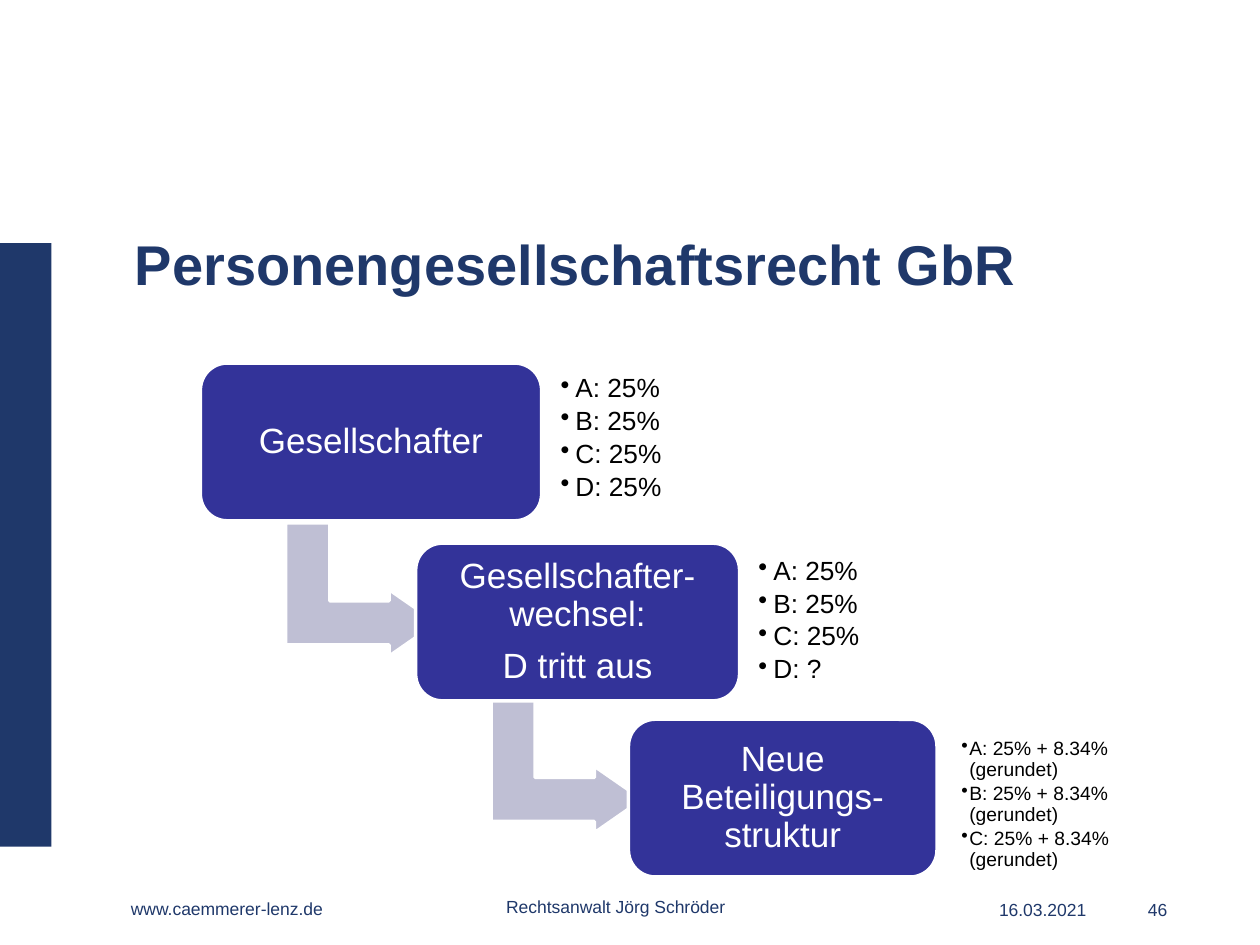
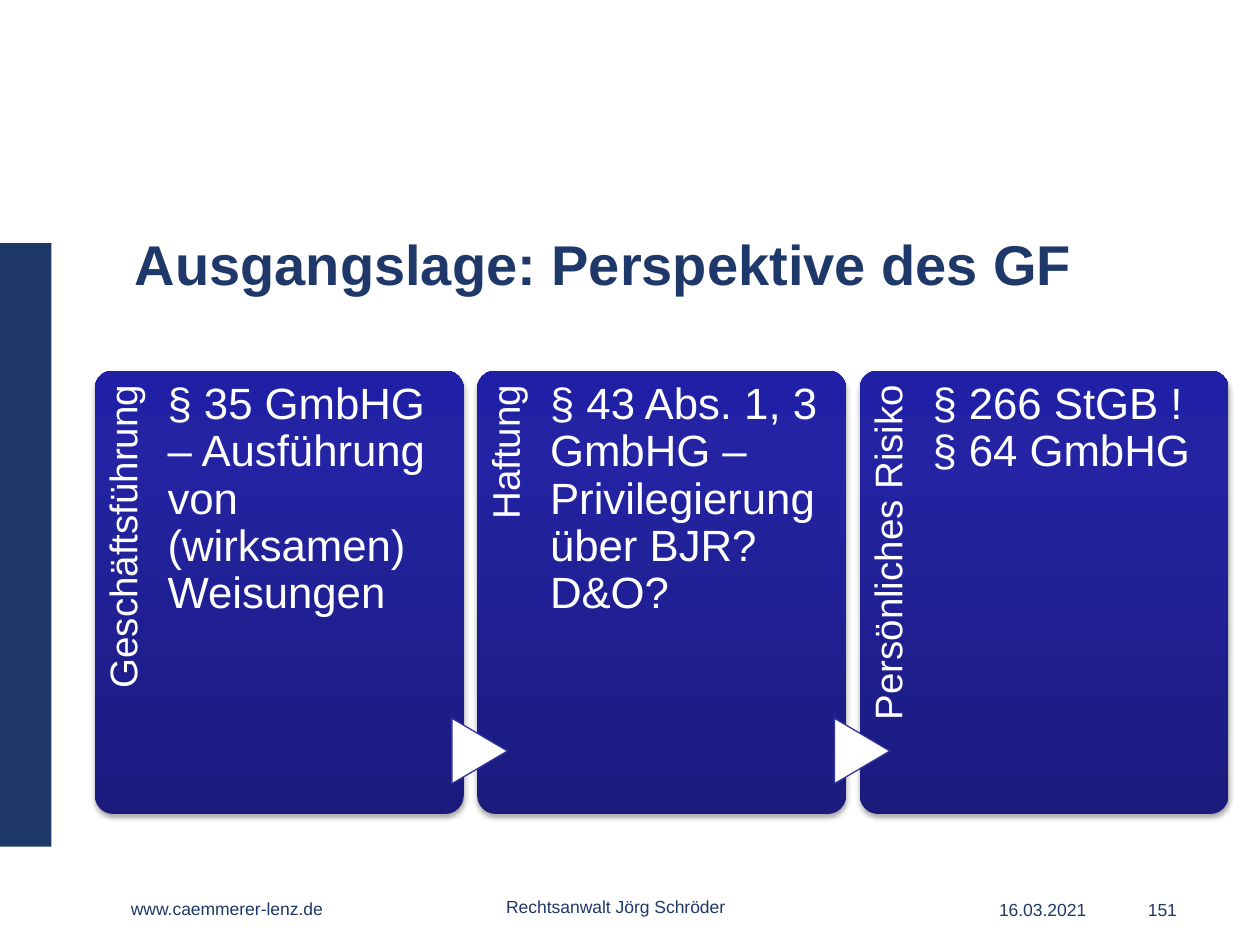
from dataclasses import dataclass

from lxml.etree import SubElement
from pptx import Presentation
from pptx.dml.color import RGBColor
from pptx.enum.shapes import MSO_SHAPE as Preset
from pptx.enum.text import MSO_ANCHOR as Anchor, PP_ALIGN as Align
from pptx.oxml.ns import qn
from pptx.util import Cm, Pt

NAVY = "1F386A"
INDIGO = "333399"
LILAC = "BFBFD4"
WHITE = "FFFFFF"
BLACK = "000000"
CARD_GRADIENT = ((0, "1B1B7E"), (80, "2323A3"), (100, "2020A6"))


@dataclass(frozen=True)
class Frame:
    left: float
    top: float
    width: float
    height: float

    def lengths(self):
        return Cm(self.left), Cm(self.top), Cm(self.width), Cm(self.height)


@dataclass(frozen=True)
class TextStyle:
    size: float
    color: str
    bold: bool = False
    align: Align = Align.LEFT
    anchor: Anchor = Anchor.TOP
    insets: tuple = (0, 0, 0, 0)
    line_spacing: float = 0.9
    space_after: float = 0
    hanging: float = 0


@dataclass(frozen=True)
class Step:
    box: Frame
    label: tuple
    shares_frame: Frame
    shares: tuple
    shares_style: TextStyle


@dataclass(frozen=True)
class Card:
    spine: str
    body: str


TITLE = TextStyle(32, NAVY, bold=True, insets=(0.23, 0.1, 0.23, 0.1), line_spacing=1)
FOOTER = TextStyle(10, NAVY, line_spacing=1.2)
FOOTER_CENTER = TextStyle(10, NAVY, align=Align.CENTER, line_spacing=1.2)
STEP_LABEL = TextStyle(20, WHITE, align=Align.CENTER, anchor=Anchor.MIDDLE,
                       insets=(0.2,) * 4, space_after=8)
SHARES = TextStyle(15, BLACK, anchor=Anchor.MIDDLE, insets=(0.2,) * 4,
                   space_after=2.6, hanging=0.3)
NEW_SHARES = TextStyle(11, BLACK, anchor=Anchor.MIDDLE, insets=(0.13,) * 4,
                       space_after=1.9, hanging=0.16)
SPINE = TextStyle(22, WHITE, align=Align.RIGHT, insets=(0, 0.2, 0.28, 0))
BODY = TextStyle(25, WHITE, insets=(0, 0.23, 0, 0))

STEPS = (
    Step(Frame(4.04, 7.32, 6.88, 3.18), ("Gesellschafter",),
         Frame(11.1, 7.32, 3.3, 3.05),
         ("A: 25%", "B: 25%", "C: 25%", "D: 25%"), SHARES),
    Step(Frame(8.38, 10.95, 6.53, 3.18), ("Gesellschafter-wechsel:", "D tritt aus"),
         Frame(15.09, 10.92, 3.3, 3.2),
         ("A: 25%", "B: 25%", "C: 25%", "D: ?"), SHARES),
    Step(Frame(12.67, 14.5, 6.22, 3.18), ("Neue Beteiligungs-struktur",),
         Frame(19.25, 14.94, 3.3, 2.57),
         tuple(f"{partner}: 25% + 8.34% (gerundet)" for partner in "ABC"), NEW_SHARES),
)
ELBOWS = (Frame(5.94, 10.36, 2.69, 3.05), Frame(10.08, 13.92, 2.69, 3.05))

CARDS = (
    Card("Geschäftsführung", "§ 35 GmbHG – Ausführung von (wirksamen) Weisungen"),
    Card("Haftung", "§ 43 Abs. 1, 3 GmbHG – Privilegierung über BJR? D&O?"),
    Card("Persönliches Risiko", "§ 266 StGB ! § 64 GmbHG"),
)
CARD_LEFT, CARD_TOP, CARD_PITCH = 1.91, 7.47, 7.71
CARD_WIDTH, CARD_HEIGHT = 7.44, 8.94


def rgb(value: str) -> RGBColor:
    return RGBColor.from_string(value)


def add_bullet(paragraph, hanging: float) -> None:
    properties = paragraph._p.get_or_add_pPr()
    properties.set("marL", str(Cm(hanging)))
    properties.set("indent", str(-Cm(hanging)))
    SubElement(properties, qn("a:buChar"), char="•")


def write(holder, lines: tuple, style: TextStyle) -> None:
    frame = holder.text_frame
    frame.word_wrap = True
    frame.vertical_anchor = style.anchor
    (frame.margin_left, frame.margin_top,
     frame.margin_right, frame.margin_bottom) = map(Cm, style.insets)
    for index, line in enumerate(lines):
        paragraph = frame.add_paragraph() if index else frame.paragraphs[0]
        paragraph.text = line
        if style.hanging:
            add_bullet(paragraph, style.hanging)
        paragraph.alignment = style.align
        paragraph.line_spacing = style.line_spacing
        paragraph.space_after = Pt(style.space_after)
        font = paragraph.font
        font.name = "Arial"
        font.size = Pt(style.size)
        font.bold = style.bold
        font.color.rgb = rgb(style.color)


def add_text(slide, frame: Frame, lines: tuple, style: TextStyle, rotation: float = 0) -> None:
    box = slide.shapes.add_textbox(*frame.lengths())
    box.rotation = rotation
    write(box, lines, style)


def add_preset(slide, preset: Preset, frame: Frame, fill: str = "", line: str = "",
               line_width: float = 2, adjustments: tuple = (), rotation: float = 0):
    shape = slide.shapes.add_shape(preset, *frame.lengths())
    shape.shadow.inherit = False
    shape.rotation = rotation
    for index, value in enumerate(adjustments):
        shape.adjustments[index] = value
    if fill:
        shape.fill.solid()
        shape.fill.fore_color.rgb = rgb(fill)
    else:
        shape.fill.background()
    if line:
        shape.line.color.rgb = rgb(line)
        shape.line.width = Pt(line_width)
    else:
        shape.line.fill.background()
    return shape


def apply_gradient(shape, stops: tuple) -> None:
    properties = shape._element.spPr
    empty_fill = properties.find(qn("a:noFill"))
    gradient = SubElement(properties, qn("a:gradFill"), rotWithShape="1")
    stop_list = SubElement(gradient, qn("a:gsLst"))
    for percent, color in stops:
        stop = SubElement(stop_list, qn("a:gs"), pos=str(percent * 1000))
        SubElement(stop, qn("a:srgbClr"), val=color)
    SubElement(gradient, qn("a:lin"), ang="16200000", scaled="0")
    properties.replace(empty_fill, gradient)


def apply_shadow(shape) -> None:
    effects = shape._element.spPr.find(qn("a:effectLst"))
    shadow = SubElement(effects, qn("a:outerShdw"), blurRad=str(Pt(3.1)),
                        dist=str(Pt(1.8)), dir="5400000", rotWithShape="0")
    color = SubElement(shadow, qn("a:srgbClr"), val=BLACK)
    SubElement(color, qn("a:alpha"), val="35000")


def start_slide(deck, title: str, number: str):
    slide = deck.slides.add_slide(deck.slide_layouts[6])
    add_preset(slide, Preset.RECTANGLE, Frame(0, 4.9, 1.04, 12.17), NAVY)
    add_text(slide, Frame(2.64, 18.01, 4.67, 1.02), ("www.caemmerer-lenz.de",), FOOTER)
    add_text(slide, Frame(20.14, 18.03, 2.67, 1.02), ("16.03.2021",), FOOTER)
    add_text(slide, Frame(23.14, 18.03, 2.26, 1.02), (number,), FOOTER)
    add_text(slide, Frame(9.91, 17.98, 5, 0.71), ("Rechtsanwalt Jörg Schröder",),
             FOOTER_CENTER)
    add_text(slide, Frame(2.49, 4.52, 21.23, 2.11), (title,), TITLE)
    return slide


def build_partnership(deck) -> None:
    slide = start_slide(deck, "Personengesellschaftsrecht GbR", "46")
    for elbow in ELBOWS:
        add_preset(slide, Preset.BENT_UP_ARROW, elbow, LILAC, WHITE,
                   adjustments=(0.33, 0.25, 0.36), rotation=90)
    for step in STEPS:
        box = add_preset(slide, Preset.ROUNDED_RECTANGLE, step.box, INDIGO, WHITE,
                         adjustments=(0.17,))
        write(box, step.label, STEP_LABEL)
        add_text(slide, step.shares_frame, step.shares, step.shares_style)


def build_director_view(deck) -> None:
    slide = start_slide(deck, "Ausgangslage: Perspektive des GF", "151")
    for index, card in enumerate(CARDS):
        left = CARD_LEFT + index * CARD_PITCH
        panel = add_preset(slide, Preset.ROUNDED_RECTANGLE,
                           Frame(left, CARD_TOP, CARD_WIDTH, CARD_HEIGHT),
                           adjustments=(0.05,))
        apply_gradient(panel, CARD_GRADIENT)
        apply_shadow(panel)
        add_text(slide, Frame(left - 2.92, 10.39, 7.32, 1.5), (card.spine,), SPINE, 270)
        if index:
            add_preset(slide, Preset.FLOWCHART_EXTRACT, Frame(left - 0.61, 14.58, 1.32, 1.12),
                       WHITE, INDIGO, 0.75, rotation=90)
        add_text(slide, Frame(left + 1.47, CARD_TOP, 5.54, CARD_HEIGHT), (card.body,), BODY)


def main() -> None:
    deck = Presentation()
    deck.slide_width, deck.slide_height = Cm(25.4), Cm(19.05)
    build_partnership(deck)
    build_director_view(deck)
    deck.save("out.pptx")


if __name__ == "__main__":
    main()
